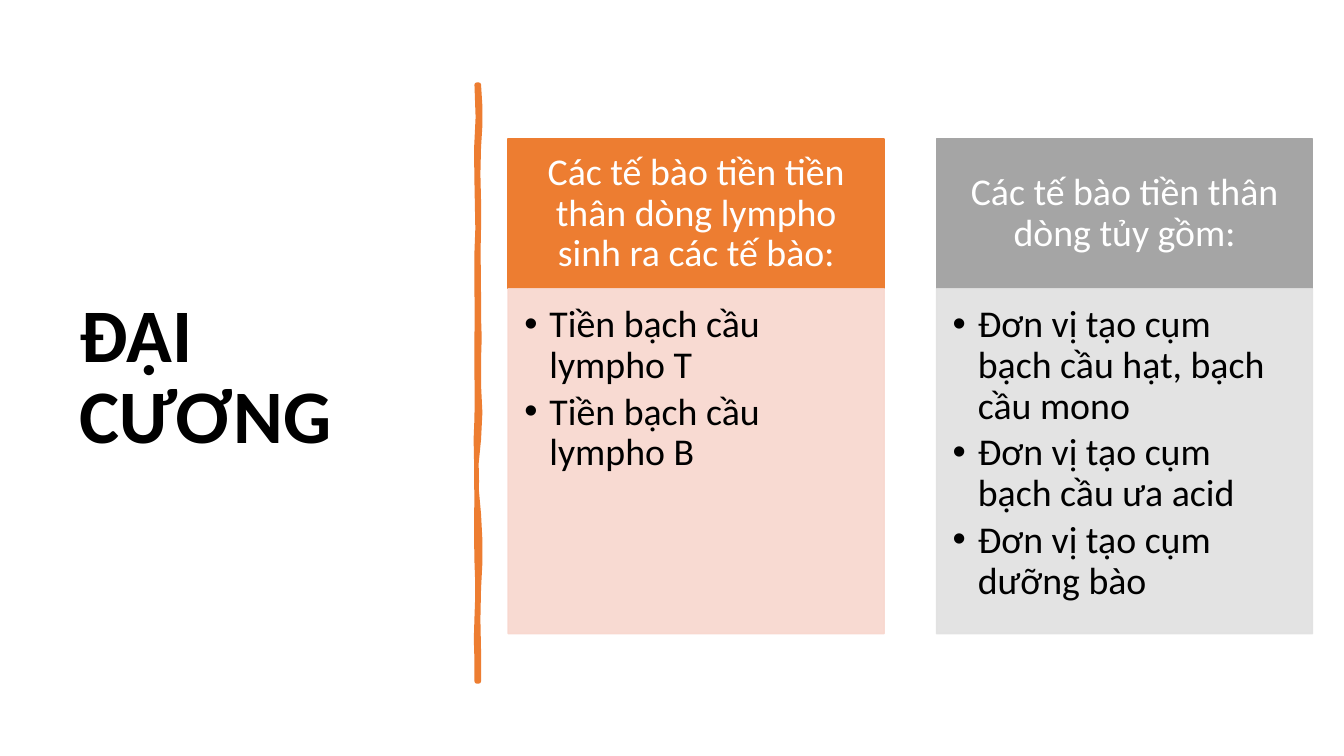
from dataclasses import dataclass
from typing import NamedTuple

from lxml import etree
from pptx import Presentation
from pptx.dml.color import RGBColor
from pptx.enum.shapes import MSO_SHAPE
from pptx.enum.text import MSO_ANCHOR, PP_ALIGN
from pptx.oxml.ns import qn
from pptx.util import Pt

RECT = MSO_SHAPE.RECTANGLE
TOP, MIDDLE = MSO_ANCHOR.TOP, MSO_ANCHOR.MIDDLE
LEFT, CENTER = PP_ALIGN.LEFT, PP_ALIGN.CENTER

BLACK = RGBColor(0x00, 0x00, 0x00)
WHITE = RGBColor(0xFF, 0xFF, 0xFF)
ORANGE = RGBColor(0xED, 0x7D, 0x31)
PEACH = RGBColor(0xF8, 0xD7, 0xCE)
GRAY = RGBColor(0xA5, 0xA5, 0xA5)
PALE_GRAY = RGBColor(0xE1, 0xE1, 0xE1)

COLUMN_LEFT, COLUMN_PITCH, COLUMN_WIDTH = 363, 306, 268.56
HEADER_TOP, HEADER_HEIGHT, BODY_HEIGHT = 99.2, 107.1, 246.4
BULLET_INDENT = 18
DIVIDER_TOP = 60.5
STEPS = 3

TITLE_FONT = {"name": "Calibri", "size": Pt(54), "bold": True}
CARD_FONT = {"name": "Calibri", "size": Pt(27), "bold": False}


class Box(NamedTuple):
    left: float
    top: float
    width: float
    height: float


class Wave(NamedTuple):
    end_y: float
    bend_1: float
    bend_2: float


@dataclass
class Column:
    header: str
    items: list[str]
    header_color: RGBColor
    body_color: RGBColor


@dataclass
class TextStyle:
    font: dict
    color: RGBColor
    anchor: MSO_ANCHOR
    align: PP_ALIGN
    insets: tuple[float, float, float, float]
    bullets: bool = False


TITLE_STYLE = TextStyle(TITLE_FONT, BLACK, MIDDLE, LEFT, (7.2, 3.6, 7.2, 3.6))
HEADER_STYLE = TextStyle(CARD_FONT, WHITE, MIDDLE, CENTER, (15.12, 8.64, 15.12, 8.64))
BODY_STYLE = TextStyle(CARD_FONT, BLACK, TOP, LEFT, (11.52, 11.52, 15.12, 17.28), True)

COLUMNS = [
    Column("Các tế bào tiền tiền thân dòng lympho sinh ra các tế bào:",
           ["Tiền bạch cầu lympho T", "Tiền bạch cầu lympho B"],
           ORANGE, PEACH),
    Column("Các tế bào tiền thân dòng tủy gồm:",
           ["Đơn vị tạo cụm bạch cầu hạt, bạch cầu mono",
            "Đơn vị tạo cụm bạch cầu ưa acid",
            "Đơn vị tạo cụm dưỡng bào"],
           GRAY, PALE_GRAY),
]

RIGHT_X, LEFT_X = 342, 340.56
RIGHT_EDGE = [
    Wave(105.1, 1.4, 1.4), Wave(162.7, -1.4, 0.7), Wave(211.7, -0.7, 0),
    Wave(256.3, -0.7, 1.4), Wave(313.9, -1.4, 2.9), Wave(367.2, -2.9, -2.2),
    Wave(420.5, 1.4, 1.4), Wave(486.7, -1.4, 0.7),
]
LEFT_EDGE = [
    Wave(441.4, 0.7, -1.4), Wave(401, 0.7, 0.7), Wave(343.4, -0.7, 0),
    Wave(298.8, 0, -1.4), Wave(241.2, 0.7, -0.7), Wave(180, 0.7, -0.7),
    Wave(130.3, 1.4, 0), Wave(DIVIDER_TOP, -2.2, 2.9),
]


def edge_points(x: float, y: float, waves: list[Wave]) -> list[tuple[int, int]]:
    points = [(Pt(x), Pt(y))]
    for wave in waves:
        for step in range(1, STEPS + 1):
            t = step / STEPS
            bend = 3 * t * (1 - t) * ((1 - t) * wave.bend_1 + t * wave.bend_2)
            points.append((Pt(x + bend), Pt(y + t * (wave.end_y - y))))
        y = wave.end_y
    return points


def paint(sp, color: RGBColor, line_width: float) -> None:
    sp.shadow.inherit = False
    sp.fill.solid()
    sp.fill.fore_color.rgb = color
    sp.line.color.rgb = color
    sp.line.width = Pt(line_width)


def set_alpha(sp, percent: int) -> None:
    for clr in sp._element.spPr.iter(qn("a:srgbClr")):
        etree.SubElement(clr, qn("a:alpha")).set("val", str(percent * 1000))


def add_bullet(p) -> None:
    pPr = p._p.get_or_add_pPr()
    pPr.set("marL", str(Pt(BULLET_INDENT)))
    pPr.set("indent", str(-Pt(BULLET_INDENT)))
    etree.SubElement(pPr, qn("a:buFont")).set("typeface", "Arial")
    etree.SubElement(pPr, qn("a:buChar")).set("char", "•")


def write_text(sp, lines: list[str], style: TextStyle) -> None:
    tf = sp.text_frame
    tf.word_wrap = True
    tf.vertical_anchor = style.anchor
    sides = ("left", "top", "right", "bottom")
    for side, inset in zip(sides, style.insets):
        setattr(tf, f"margin_{side}", Pt(inset))
    for i, line in enumerate(lines):
        p = tf.add_paragraph() if i else tf.paragraphs[0]
        p.alignment = style.align
        p.line_spacing = 0.9
        if style.bullets:
            p.space_after = Pt(4.05)
            add_bullet(p)
        r = p.add_run()
        r.text = line
        r.font.color.rgb = style.color
        for name, value in style.font.items():
            setattr(r.font, name, value)


def add_card(s, box: Box, color: RGBColor, lines: list[str], style: TextStyle):
    sp = s.shapes.add_shape(RECT, *map(Pt, box))
    paint(sp, color, 1)
    write_text(sp, lines, style)
    return sp


def add_column(s, left: float, column: Column) -> None:
    header = Box(left, HEADER_TOP, COLUMN_WIDTH, HEADER_HEIGHT)
    body = Box(left, HEADER_TOP + HEADER_HEIGHT, COLUMN_WIDTH, BODY_HEIGHT)
    add_card(s, header, column.header_color, [column.header], HEADER_STYLE)
    sp = add_card(s, body, column.body_color, column.items, BODY_STYLE)
    set_alpha(sp, 90)


def add_divider(s) -> None:
    right = edge_points(RIGHT_X, DIVIDER_TOP, RIGHT_EDGE)
    left = edge_points(LEFT_X, RIGHT_EDGE[-1].end_y, LEFT_EDGE)
    builder = s.shapes.build_freeform(*right[0])
    builder.add_line_segments(right[1:] + left, close=True)
    sp = builder.convert_to_shape()
    paint(sp, ORANGE, 3.25)
    etree.SubElement(sp._element.spPr.find(qn("a:ln")), qn("a:round"))


def main() -> None:
    prs = Presentation()
    prs.slide_width, prs.slide_height = Pt(960), Pt(540)
    s = prs.slides.add_slide(prs.slide_layouts[6])
    title = s.shapes.add_textbox(*map(Pt, Box(50, 50.4, 269.28, 439.92)))
    write_text(title, ["ĐẠI CƯƠNG"], TITLE_STYLE)
    add_divider(s)
    for i, column in enumerate(COLUMNS):
        add_column(s, COLUMN_LEFT + i * COLUMN_PITCH, column)
    prs.save("out.pptx")


if __name__ == "__main__":
    main()
